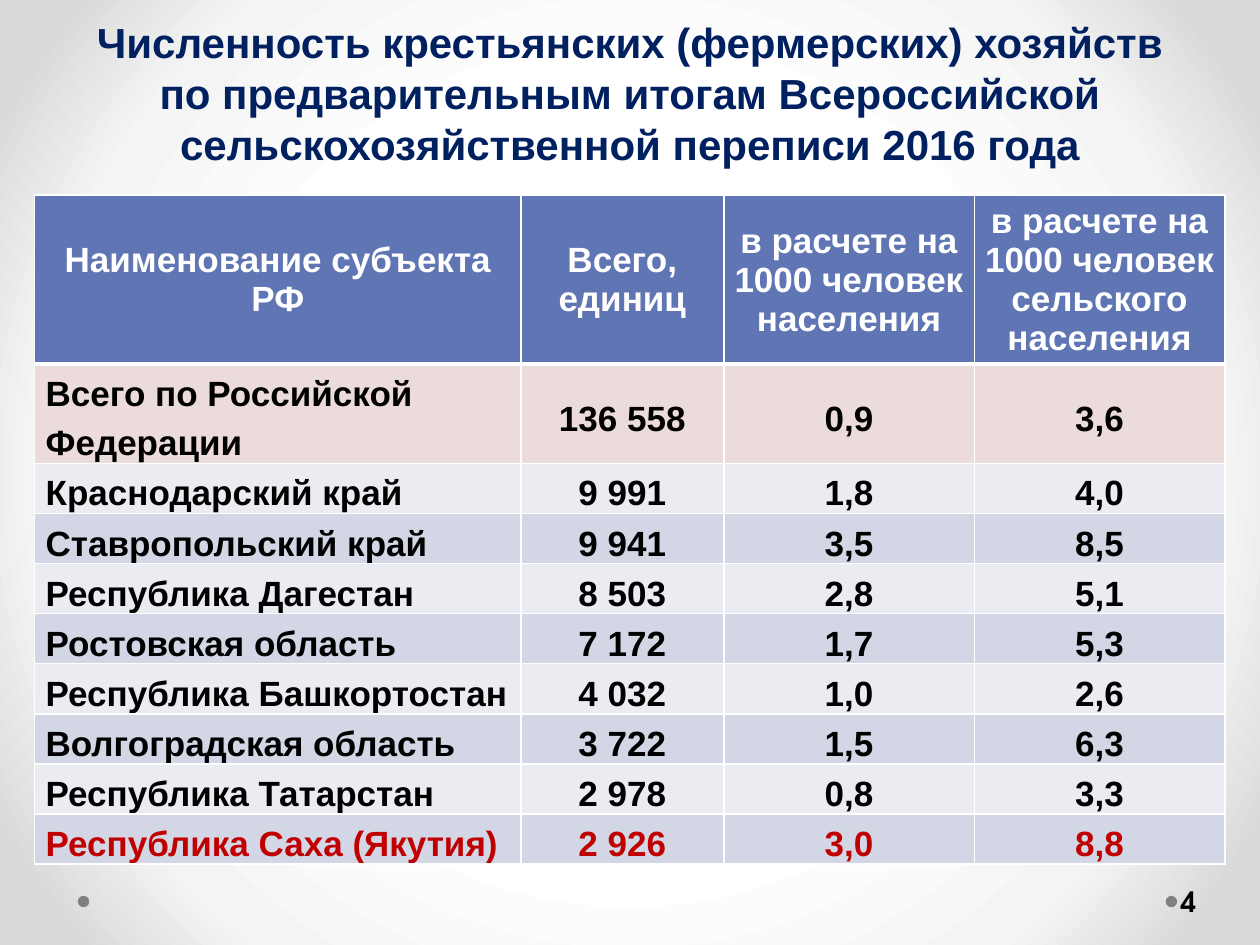
from lxml import etree
from pptx import Presentation
from pptx.dml.color import RGBColor
from pptx.enum import shapes, text
from pptx.oxml import ns, parse_xml
from pptx.util import Cm, Pt

# Content
TITLE = ("Численность крестьянских (фермерских) хозяйств по предварительным "
         "итогам Всероссийской сельскохозяйственной переписи 2016 года")
PAGE_NUMBER = "4"
HEADER = ("Наименование субъекта РФ", "Всего, единиц",
          "в расчете на 1000 человек населения",
          "в расчете на 1000 человек сельского населения")
REGIONS = [
    ("Всего по Российской\nФедерации", "136 558", "0,9", "3,6"),
    ("Краснодарский край", "9 991", "1,8", "4,0"),
    ("Ставропольский край", "9 941", "3,5", "8,5"),
    ("Республика Дагестан", "8 503", "2,8", "5,1"),
    ("Ростовская область", "7 172", "1,7", "5,3"),
    ("Республика Башкортостан", "4 032", "1,0", "2,6"),
    ("Волгоградская область", "3 722", "1,5", "6,3"),
    ("Республика Татарстан", "2 978", "0,8", "3,3"),
    ("Республика Саха (Якутия)", "2 926", "3,0", "8,8"),
]
COLORS = {"title": "002060", "header": "6076B4", "total": "ECDBDB",
          "light": "EAECF2", "dark": "D2D6E5", "white": "FFFFFF",
          "black": "000000", "accent": "C00000", "dot": "808080"}
BACKGROUND_STOPS = ((50, "FFFFFF"), (76, "F4F4F4"), (92, "DADADA"))
COLUMN_WIDTHS = (9.8, 4.09, 5.05, 5.05)
ROW_HEIGHTS = [3.17, 2.0] + [1.01] * 8


def rgb(name):
    return RGBColor.from_string(COLORS[name])


def format_text(frame, size, color, font="Arial", align=None, spacing=None):
    for para in frame.paragraphs:
        para.alignment = align
        para.line_spacing = spacing
        for span in para.runs:
            span.font.name = font
            span.font.size = Pt(size)
            span.font.bold = True
            span.font.color.rgb = rgb(color)


def add_text(page, content, left, top, width, height, anchor):
    frame = page.shapes.add_textbox(
        Cm(left), Cm(top), Cm(width), Cm(height)).text_frame
    frame.word_wrap = True
    frame.vertical_anchor = anchor
    frame.text = content
    return frame


def set_background(page):
    stops = "".join(f'<a:gs pos="{pos * 1000}"><a:srgbClr val="{color}"/></a:gs>'
                    for pos, color in BACKGROUND_STOPS)
    page.background.fill.solid()
    properties = page.element.cSld.find(ns.qn("p:bg")).find(ns.qn("p:bgPr"))
    gradient = parse_xml(
        f'<a:gradFill {ns.nsdecls("a")} rotWithShape="1"><a:gsLst>{stops}</a:gsLst>'
        '<a:path path="circle"><a:fillToRect l="50000" t="50000" r="50000" '
        'b="50000"/></a:path></a:gradFill>')
    properties.replace(properties[0], gradient)


def set_borders(cell, bottom_width):
    properties = cell._tc.get_or_add_tcPr()
    widths = {"lnL": 1, "lnR": 1, "lnT": 1, "lnB": bottom_width}
    for position, (side, width) in enumerate(widths.items()):
        line = etree.Element(ns.qn(f"a:{side}"), w=str(Pt(width)))
        fill = etree.SubElement(line, ns.qn("a:solidFill"))
        etree.SubElement(fill, ns.qn("a:srgbClr"), val=COLORS["white"])
        properties.insert(position, line)


def row_style(row):
    """Return the fill and text colours of a table row."""
    if row == 0:
        return "header", "white"
    if row == 1:
        return "total", "black"
    return ("dark" if row % 2 else "light",
            "accent" if row == len(REGIONS) else "black")


def add_region_table(page):
    rows = [HEADER] + REGIONS
    table = page.shapes.add_table(
        len(rows), len(HEADER), Cm(0.7), Cm(3.93),
        Cm(sum(COLUMN_WIDTHS)), Cm(sum(ROW_HEIGHTS))).table
    for column, width in zip(table.columns, COLUMN_WIDTHS):
        column.width = Cm(width)
    for r, values in enumerate(rows):
        table.rows[r].height = Cm(ROW_HEIGHTS[r])
        fill, color = row_style(r)
        for c, value in enumerate(values):
            cell = table.cell(r, c)
            is_name = r > 0 and c == 0
            cell.text = value
            cell.vertical_anchor = text.MSO_ANCHOR.MIDDLE
            cell.margin_left = Cm(0.22 if is_name else 0.02)
            cell.margin_top = cell.margin_right = Cm(0.02)
            cell.margin_bottom = 0
            cell.fill.solid()
            cell.fill.fore_color.rgb = rgb(fill)
            set_borders(cell, 1 if r else 3)
            format_text(cell.text_frame, 20, color,
                        align=text.PP_ALIGN.LEFT if is_name else text.PP_ALIGN.CENTER,
                        spacing=Pt(28) if r else None)


def main():
    deck = Presentation()
    deck.slide_width, deck.slide_height = Cm(25.4), Cm(19.05)
    page = deck.slides.add_slide(deck.slide_layouts[6])
    set_background(page)

    # Footer dots
    for left in (23.5, 1.57):
        dot = page.shapes.add_shape(shapes.MSO_SHAPE.OVAL, Cm(left), Cm(18.06),
                                    Cm(0.23), Cm(0.23))
        dot.shadow.inherit = False
        dot.fill.solid()
        dot.fill.fore_color.rgb = rgb("dot")
        dot.line.fill.background()

    # Title
    title = add_text(page, TITLE, 1.27, 0.53, 22.86, 3, text.MSO_ANCHOR.BOTTOM)
    format_text(title, 24, "title", align=text.PP_ALIGN.CENTER, spacing=Pt(29))

    # Page number
    number = add_text(page, PAGE_NUMBER, 23.72, 17.65, 1.55, 1.02,
                      text.MSO_ANCHOR.MIDDLE)
    number.margin_left, number.margin_right = Cm(0.08), Cm(0.13)
    format_text(number, 16, "black", font="TeX Gyre Adventor")

    add_region_table(page)
    deck.save("out.pptx")


if __name__ == "__main__":
    main()
